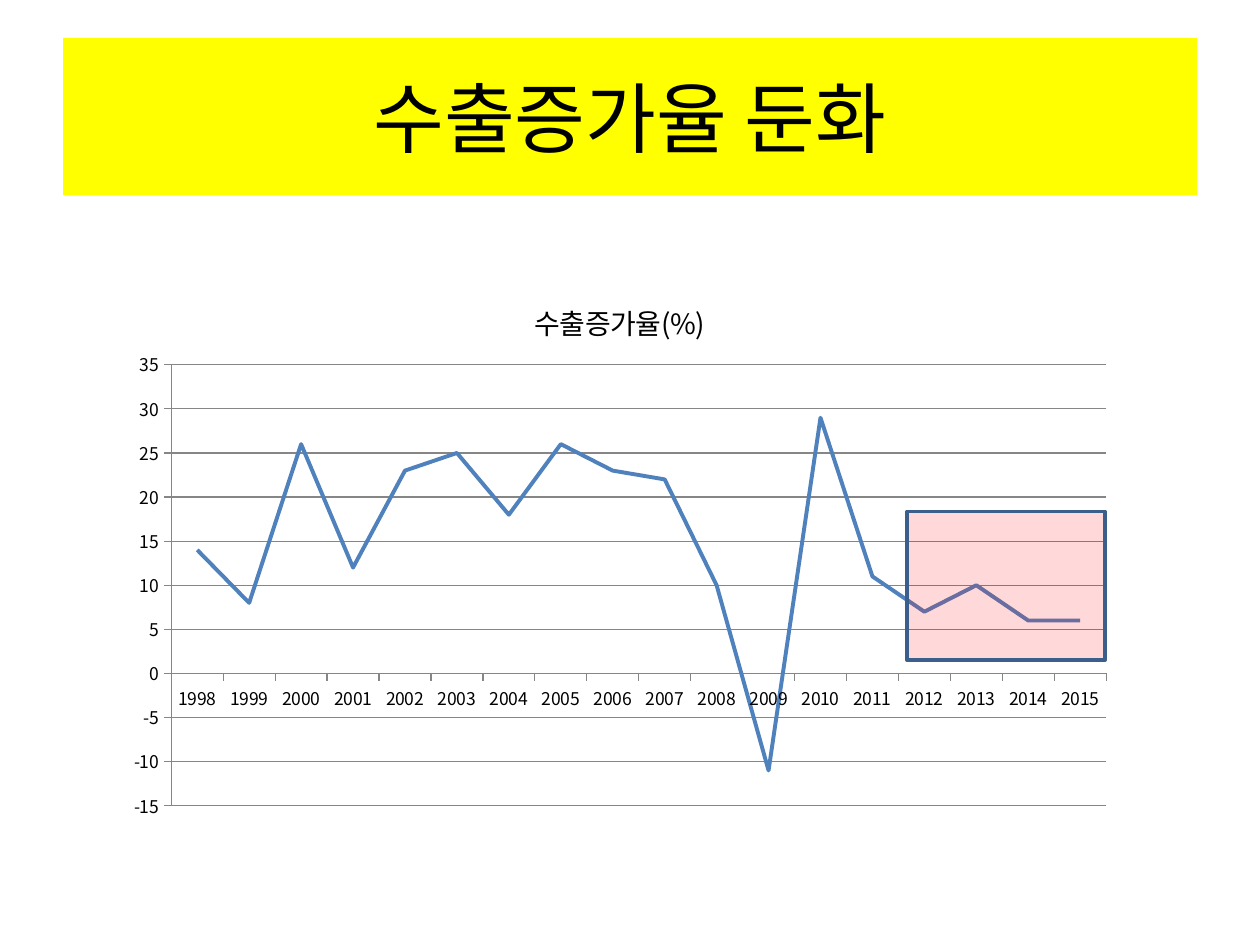
import pptx
import pptx.chart.data
import pptx.dml.color
import pptx.enum.chart
import pptx.enum.shapes
import pptx.enum.text
import pptx.oxml
import pptx.oxml.ns
import pptx.util

Pt = pptx.util.Pt
FONT = "Noto Sans CJK KR"
COLORS = {
    "banner": "FFFF00",
    "text": "000000",
    "line": "4F81BD",
    "grid": "868686",
    "highlight": "FF0000",
    "border": "3A5F8C",
}
GROWTH = [14, 8, 26, 12, 23, 25, 18, 26, 23, 22, 10, -11, 29, 11, 7, 10, 6, 6]


def rgb(name):
    return pptx.dml.color.RGBColor.from_string(COLORS[name])


def fill_solid(sp, name):
    sp.fill.solid()
    sp.fill.fore_color.rgb = rgb(name)


def set_font(font, size):
    font.name = FONT
    font.size = Pt(size)
    font.bold = False
    font.color.rgb = rgb("text")


def add_run(p, text, size):
    r = p.add_run()
    r.text = text
    set_font(r.font, size)
    rPr = r.font._element
    ea = pptx.oxml.parse_xml(
        f'<a:ea {pptx.oxml.ns.nsdecls("a")} typeface="{FONT}"/>')
    rPr.find(pptx.oxml.ns.qn("a:latin")).addnext(ea)


def add_title(s, text):
    sp = s.shapes.title
    sp.left, sp.top, sp.width, sp.height = Pt(36), Pt(21.6), Pt(648), Pt(90)
    fill_solid(sp, "banner")
    tf = sp.text_frame
    tf.vertical_anchor = pptx.enum.text.MSO_ANCHOR.MIDDLE
    p = tf.paragraphs[0]
    p.alignment = pptx.enum.text.PP_ALIGN.CENTER
    add_run(p, text, 44)


def set_layout(parent, after, **parts):
    for old in parent.findall(pptx.oxml.ns.qn("c:layout")):
        parent.remove(old)
    body = "".join(f'<c:{k} val="{v}"/>' for k, v in parts.items())
    layout = pptx.oxml.parse_xml(
        f'<c:layout {pptx.oxml.ns.nsdecls("c")}>'
        f'<c:manualLayout>{body}</c:manualLayout></c:layout>')
    if after is None:
        parent.insert(0, layout)
    else:
        after.addnext(layout)


def format_axis(axis):
    axis.major_tick_mark = pptx.enum.chart.XL_TICK_MARK.OUTSIDE
    axis.minor_tick_mark = pptx.enum.chart.XL_TICK_MARK.NONE
    axis.format.line.color.rgb = rgb("grid")
    axis.format.line.width = Pt(0.75)
    set_font(axis.tick_labels.font, 10)


def add_line_chart(s, name, years, values):
    data = pptx.chart.data.CategoryChartData()
    data.categories = [str(y) for y in years]
    data.add_series(name, values)
    chart = s.shapes.add_chart(
        pptx.enum.chart.XL_CHART_TYPE.LINE,
        Pt(65.5), Pt(152.6), Pt(578.2), Pt(321.1), data).chart
    set_font(chart.font, 10)
    chart.has_legend = False
    chart.has_title = True
    tf = chart.chart_title.text_frame
    add_run(tf.paragraphs[0], name, 16)
    title = chart.chart_title._element
    set_layout(title, title.find(pptx.oxml.ns.qn("c:tx")),
               xMode="edge", yMode="edge", x=0.41, y=0.05)

    plot = chart.plots[0]
    plot.vary_by_categories = False
    line = plot.series[0]
    line.smooth = False
    line.marker.style = pptx.enum.chart.XL_MARKER_STYLE.NONE
    line.format.line.color.rgb = rgb("line")
    line.format.line.width = Pt(2.25)
    set_layout(plot._element.getparent(), None,
               layoutTarget="inner", xMode="edge", yMode="edge",
               x=0.056, y=0.174, w=0.924, h=0.785)

    format_axis(chart.category_axis)
    axis = chart.value_axis
    format_axis(axis)
    axis.minimum_scale, axis.maximum_scale, axis.major_unit = -15, 35, 5
    axis.has_major_gridlines = True
    axis.major_gridlines.format.line.color.rgb = rgb("grid")
    axis.major_gridlines.format.line.width = Pt(0.75)


def add_highlight(s, left, top, width, height, opacity):
    sp = s.shapes.add_shape(
        pptx.enum.shapes.MSO_SHAPE.RECTANGLE,
        Pt(left), Pt(top), Pt(width), Pt(height))
    sp.shadow.inherit = False
    fill_solid(sp, "highlight")
    color = sp._element.spPr.find(".//" + pptx.oxml.ns.qn("a:srgbClr"))
    color.append(pptx.oxml.parse_xml(
        f'<a:alpha {pptx.oxml.ns.nsdecls("a")} val="{opacity * 1000}"/>'))
    sp.line.color.rgb = rgb("border")
    sp.line.width = Pt(2)


def main():
    prs = pptx.Presentation()
    prs.slide_width, prs.slide_height = Pt(720), Pt(540)
    s = prs.slides.add_slide(prs.slide_layouts[5])
    add_title(s, "수출증가율 둔화")
    add_line_chart(s, "수출증가율(%)", range(1998, 2016), GROWTH)
    add_highlight(s, 518.4, 292.3, 113, 85, 15)
    prs.save("out.pptx")


if __name__ == "__main__":
    main()
